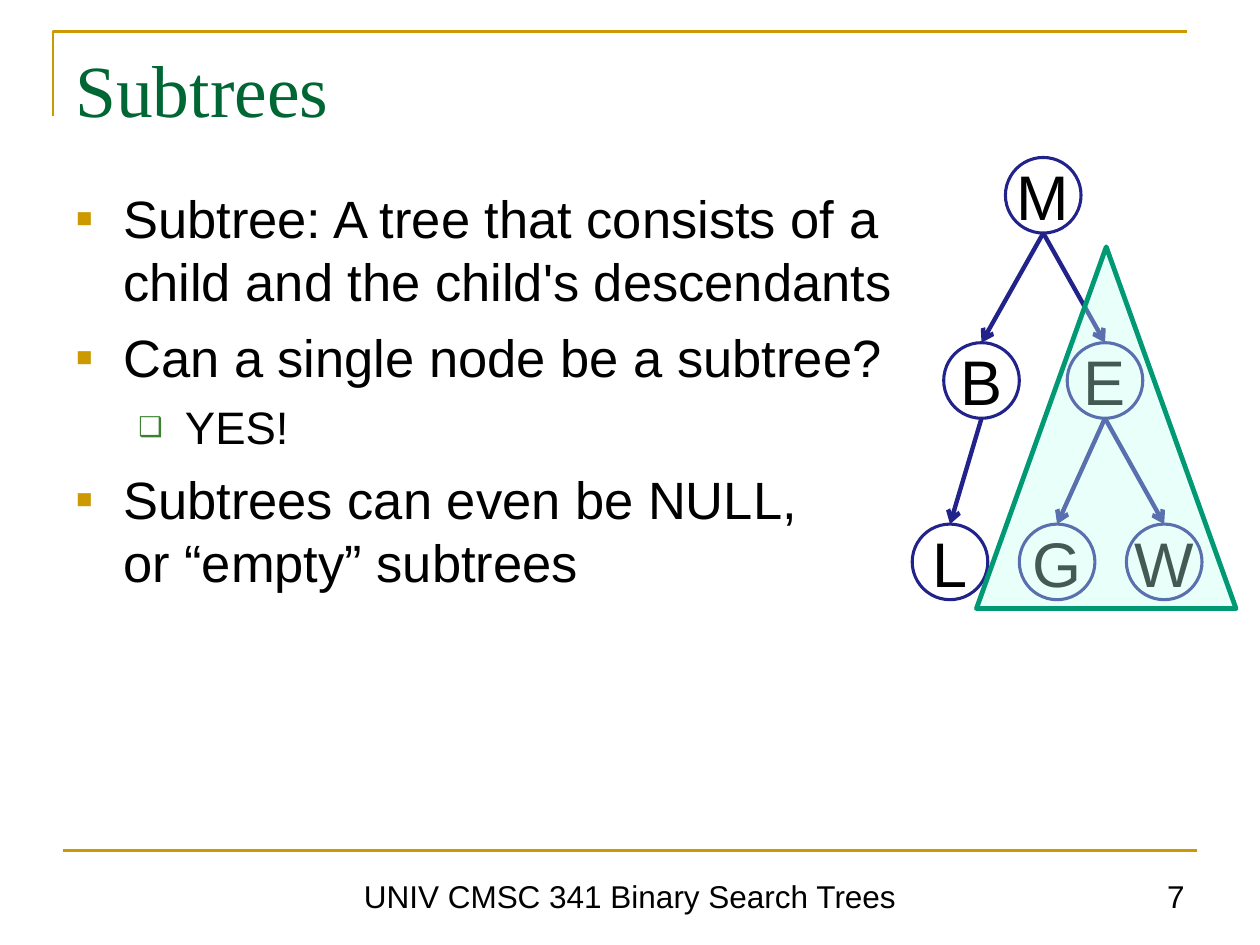
from lxml import etree
from pptx import Presentation
from pptx.dml.color import RGBColor
from pptx.enum.shapes import MSO_CONNECTOR, MSO_SHAPE
from pptx.enum.text import MSO_ANCHOR, PP_ALIGN
from pptx.oxml.ns import qn
from pptx.util import Inches, Pt

STRAIGHT = MSO_CONNECTOR.STRAIGHT
ELLIPSE, TRIANGLE = MSO_SHAPE.OVAL, MSO_SHAPE.ISOSCELES_TRIANGLE
TOP, MIDDLE, BOTTOM = MSO_ANCHOR.TOP, MSO_ANCHOR.MIDDLE, MSO_ANCHOR.BOTTOM
LEFT, CENTER, RIGHT = PP_ALIGN.LEFT, PP_ALIGN.CENTER, PP_ALIGN.RIGHT

WIDTH, HEIGHT = 10, 7.5
COLORS = {
    "rule": "CC9900", "title": "006633", "text": "000000", "sub_bullet": "3B812F",
    "node": "FFFFFF", "edge": "22228B", "subtree": "C2FFF0", "subtree_line": "009973",
}
# Per outline level: text size, space before, left indent, hanging, bullet, color, bullet %
LEVELS = [
    (30, 7.5, 0.38, 0.38, "▪", "rule", 100),
    (26, 6.5, 0.87, 0.37, "❑", "sub_bullet", 60),
]
OUTLINE = [
    (0, "Subtree: A tree that consists of a \nchild and the child's descendants"),
    (0, "Can a single node be a subtree?"),
    (1, "YES!"),
    (0, "Subtrees can even be NULL,\nor “empty” subtrees"),
]

NODE_SIZE = 0.6
ROOT_X = 8.28
ROW_Y = [1.55, 3.02, 4.46]
CHILD_GAP = 0.98
LEAF_X, LEAF_GAP = 7.54, 0.85
NODES = {
    "M": (ROOT_X, ROW_Y[0]),
    "B": (ROOT_X - CHILD_GAP / 2, ROW_Y[1]),
    "E": (ROOT_X + CHILD_GAP / 2, ROW_Y[1]),
    **{leaf: (LEAF_X + i * LEAF_GAP, ROW_Y[2]) for i, leaf in enumerate("LGW")},
}
EDGES = ["MB", "ME", "BL", "EG", "EW"]


def color(key):
    return RGBColor.from_string(COLORS[key])


def inches(*values):
    return [Inches(value) for value in values]


def style_line(line, key, width):
    line.color.rgb = color(key)
    line.width = Pt(width)


def write(paragraph, text, size, font="Arial", key="text", align=LEFT):
    paragraph.text = text
    paragraph.alignment = align
    for run in paragraph.runs:
        run.font.size = Pt(size)
        run.font.name = font
        run.font.color.rgb = color(key)


def add_text_frame(slide, left, top, width, height, anchor=TOP):
    """Add a wrapping text box whose place is given as shares of the slide."""
    box = slide.shapes.add_textbox(
        *inches(left * WIDTH, top * HEIGHT, width * WIDTH, height * HEIGHT))
    frame = box.text_frame
    frame.word_wrap = True
    frame.vertical_anchor = anchor
    return frame


def add_bullet(paragraph, left, hanging, mark, key, percent):
    properties = paragraph._p.get_or_add_pPr()
    properties.set("marL", str(Inches(left)))
    properties.set("indent", str(-Inches(hanging)))
    bullet_color = etree.SubElement(properties, qn("a:buClr"))
    etree.SubElement(bullet_color, qn("a:srgbClr"), val=COLORS[key])
    etree.SubElement(properties, qn("a:buSzPct"), val=str(percent * 1000))
    etree.SubElement(properties, qn("a:buFont"), typeface="Arial")
    etree.SubElement(properties, qn("a:buChar"), char=mark)


def add_outline(slide):
    frame = add_text_frame(slide, 0.05, 0.19, 0.9, 0.7)
    for i, (level, text) in enumerate(OUTLINE):
        size, space, *bullet = LEVELS[level]
        paragraph = frame.add_paragraph() if i else frame.paragraphs[0]
        write(paragraph, text, size)
        paragraph.level = level
        paragraph.space_before = Pt(space)
        add_bullet(paragraph, *bullet)


def add_line(shapes, start, end, key, width):
    line = shapes.add_connector(STRAIGHT, *inches(*start, *end))
    style_line(line.line, key, width)
    etree.SubElement(line._element.spPr, qn("a:effectLst"))
    return line


def add_frame_rules(slide):
    """Draw the corner rule around the title and the rule above the footer."""
    left, top = 0.42, 0.25
    builder = slide.shapes.build_freeform(*inches(left, top + 0.67))
    builder.add_line_segments([inches(left, top), inches(left + 9, top)], close=False)
    corner = builder.convert_to_shape()
    corner.shadow.inherit = False
    corner.fill.background()
    style_line(corner.line, "rule", 1.5)
    add_line(slide.shapes, (0.5, 0.9 * HEIGHT), (9.5, 0.9 * HEIGHT), "rule", 1.5)


def add_figure(shapes, kind, place, fill, line, width):
    figure = shapes.add_shape(kind, *inches(*place))
    figure.shadow.inherit = False
    figure.fill.solid()
    figure.fill.fore_color.rgb = color(fill)
    style_line(figure.line, line, width)
    return figure


def add_node(shapes, label, x, y):
    half = NODE_SIZE / 2
    node = add_figure(shapes, ELLIPSE, (x - half, y - half, NODE_SIZE, NODE_SIZE),
                      "node", "edge", 1.75)
    node.text_frame.word_wrap = False
    node.text_frame.vertical_anchor = MIDDLE
    write(node.text_frame.paragraphs[0], label, 36, align=CENTER)
    return node


def add_edge(shapes, parent, child, child_node):
    half = NODE_SIZE / 2
    (parent_x, parent_y), (child_x, child_y) = NODES[parent], NODES[child]
    edge = add_line(shapes, (parent_x, parent_y + half), (child_x, child_y - half),
                    "edge", 2.5)
    edge.end_connect(child_node, 0)
    etree.SubElement(edge.line._get_or_add_ln(), qn("a:tailEnd"), type="arrow")


def add_tree(slide):
    shapes = slide.shapes.add_group_shape().shapes
    nodes = {label: add_node(shapes, label, *center) for label, center in NODES.items()}
    for parent, child in EDGES:
        add_edge(shapes, parent, child, nodes[child])
    subtree = add_figure(shapes, TRIANGLE, (7.75, 1.96, 2.06, 2.87),
                         "subtree", "subtree_line", 2.75)
    fill_color = subtree._element.spPr.find(qn("a:solidFill")).find(qn("a:srgbClr"))
    etree.SubElement(fill_color, qn("a:alpha"), val="35000")


def main():
    deck = Presentation()
    deck.slide_width, deck.slide_height = inches(WIDTH, HEIGHT)
    slide = deck.slides.add_slide(deck.slide_layouts[6])

    add_frame_rules(slide)
    title = add_text_frame(slide, 0.05, 0.04, 0.9, 0.15)
    write(title.paragraphs[0], "Subtrees", 42, font="Times New Roman", key="title")
    add_outline(slide)
    footer = add_text_frame(slide, 0.175, 0.91, 0.65, 0.065, BOTTOM)
    write(footer.paragraphs[0], "UNIV CMSC 341 Binary Search Trees", 18, align=CENTER)
    page_number = add_text_frame(slide, 0.717, 0.91, 0.233, 0.065, BOTTOM)
    write(page_number.paragraphs[0], "7", 18, align=RIGHT)
    add_tree(slide)

    deck.save("out.pptx")


if __name__ == "__main__":
    main()
